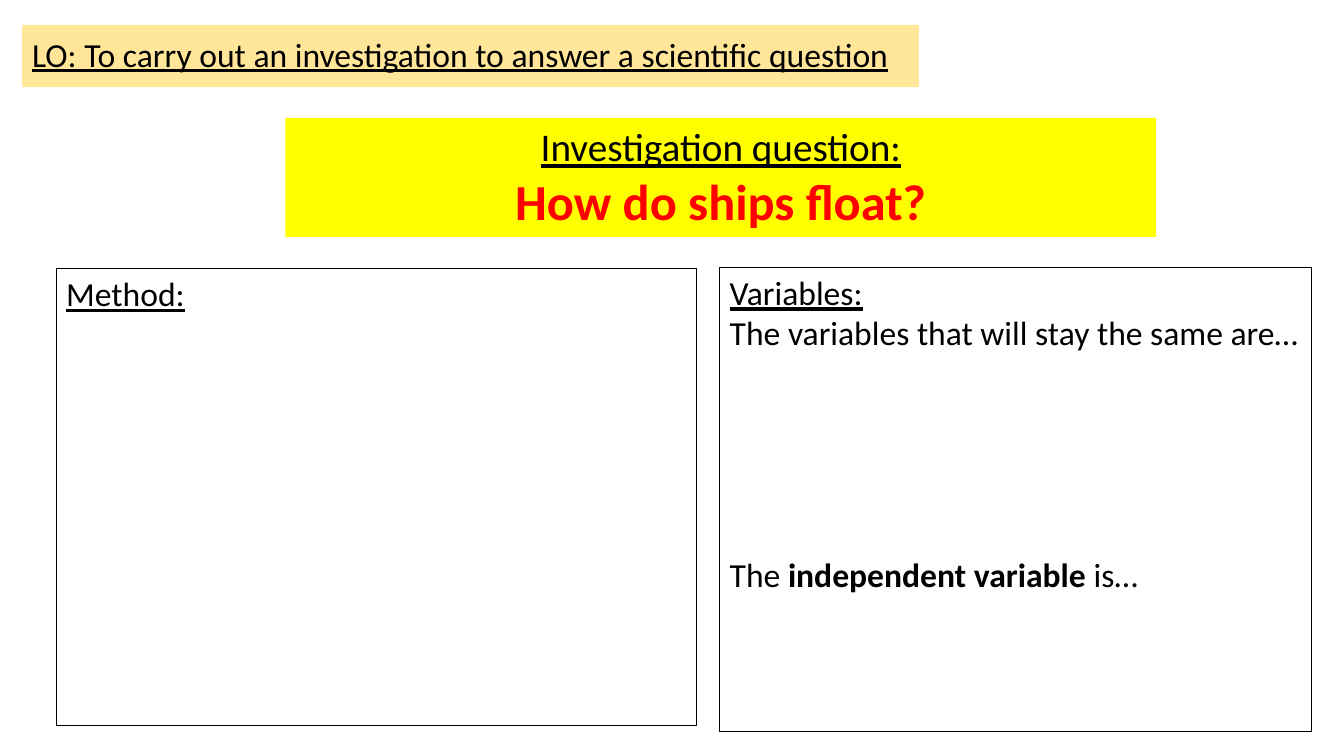
import pptx
import pptx.util
from pptx.dml.color import RGBColor
from pptx.enum.text import MSO_ANCHOR, PP_ALIGN
from pptx.util import Cm, Pt

BLACK = RGBColor(0x00, 0x00, 0x00)
WHITE = RGBColor(0xFF, 0xFF, 0xFF)
RED = RGBColor(0xFF, 0x00, 0x00)
YELLOW = RGBColor(0xFF, 0xFF, 0x00)
SAND = RGBColor(0xFF, 0xE6, 0x99)

BODY = {"name": "Calibri", "size": Pt(24)}
HEADING = {**BODY, "underline": True}
STRONG = {**BODY, "bold": True}
QUESTION_LABEL = {**HEADING, "size": Pt(28)}
QUESTION = {**STRONG, "size": Pt(36)}

# Each paragraph: (paragraph format, [(text, font format, colour), ...])
CENTRED = {"alignment": PP_ALIGN.CENTER}
ANSWER_GAP = {"space_before": Pt(144)}

BOXES = [
    {"at": (0.56, 0.63, 22.6, 1.57), "fill": SAND, "outlined": False,
     "anchor": MSO_ANCHOR.MIDDLE,
     "paragraphs": [
         ({"line_spacing": 0.9},
          [("LO: To carry out an investigation to answer a scientific question",
            HEADING, BLACK)])]},
    {"at": (7.19, 2.97, 21.95, 3.0), "fill": YELLOW, "outlined": False,
     "anchor": MSO_ANCHOR.TOP,
     "paragraphs": [
         (CENTRED, [("Investigation question:", QUESTION_LABEL, BLACK)]),
         (CENTRED, [("How do ships float?", QUESTION, RED)])]},
    {"at": (1.42, 6.76, 16.13, 11.53), "fill": WHITE, "outlined": True,
     "anchor": MSO_ANCHOR.TOP,
     "paragraphs": [({}, [("Method:", HEADING, BLACK)])]},
    {"at": (18.14, 6.73, 14.91, 11.71), "fill": WHITE, "outlined": True,
     "anchor": MSO_ANCHOR.TOP,
     "paragraphs": [
         ({}, [("Variables:", HEADING, BLACK)]),
         ({}, [("The variables that will stay the same are…", BODY, BLACK)]),
         (ANSWER_GAP, [("The ", BODY, BLACK),
                       ("independent variable ", STRONG, BLACK),
                       ("is…", BODY, BLACK)])]},
]


def apply(target, formats):
    for name, value in formats.items():
        setattr(target, name, value)


def add_box(s, box):
    sp = s.shapes.add_textbox(*map(Cm, box["at"]))
    sp.fill.solid()
    sp.fill.fore_color.rgb = box["fill"]
    if box["outlined"]:
        sp.line.color.rgb = BLACK
        sp.line.width = Pt(0.75)
    tf = sp.text_frame
    apply(tf, {"word_wrap": True, "vertical_anchor": box["anchor"]})
    for i, (layout, runs) in enumerate(box["paragraphs"]):
        p = tf.add_paragraph() if i else tf.paragraphs[0]
        apply(p, layout)
        for text, font, colour in runs:
            r = p.add_run()
            r.text = text
            apply(r.font, font)
            r.font.color.rgb = colour


def main():
    prs = pptx.Presentation()
    prs.slide_width, prs.slide_height = Cm(33.87), Cm(19.05)
    s = prs.slides.add_slide(prs.slide_layouts[6])
    for box in BOXES:
        add_box(s, box)
    prs.save("out.pptx")


if __name__ == "__main__":
    main()
